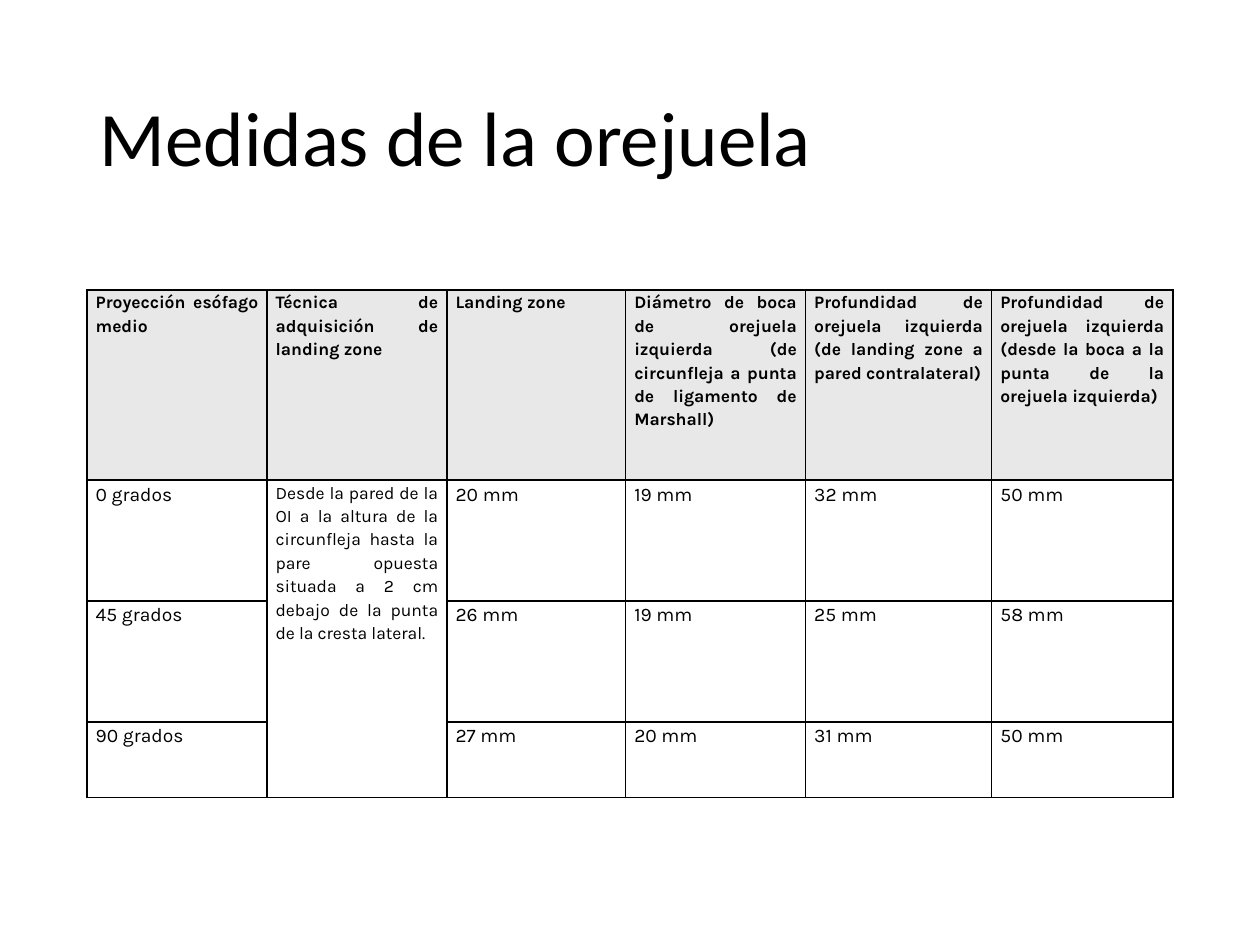
import pptx
import pptx.dml.color
import pptx.enum.text
import pptx.oxml
import pptx.oxml.ns
import pptx.util

PP_ALIGN = pptx.enum.text.PP_ALIGN
Pt = pptx.util.Pt
Inches = pptx.util.Inches

HEADERS = [
    "Proyección esófago medio",
    "Técnica de adquisición de landing zone",
    "Landing zone",
    "Diámetro de boca de orejuela izquierda (de circunfleja a punta de ligamento de Marshall)",
    "Profundidad de orejuela izquierda (de landing zone a pared contralateral)",
    "Profundidad de orejuela izquierda (desde la boca a la punta de la orejuela izquierda)",
]
TECHNIQUE = (
    "Desde la pared de la OI a la altura de la circunfleja hasta la pare opuesta "
    "situada a 2 cm debajo de la punta de la cresta lateral."
)
MEASURES = [
    ["0 grados", TECHNIQUE, "20 mm", "19 mm", "32 mm", "50 mm"],
    ["45 grados", "", "26 mm", "19 mm", "25 mm", "58 mm"],
    ["90 grados", "", "27 mm", "20 mm", "31 mm", "50 mm"],
]
COL_WIDTHS = [1.43, 1.43, 1.42, 1.43, 1.48, 1.44]
ROW_HEIGHTS = [1.51, 0.96, 0.96, 0.6]


def rgb(value):
    return pptx.dml.color.RGBColor.from_string(value)


def share_box(prs, left, top, width, height):
    w, h = prs.slide_width, prs.slide_height
    return int(left * w), int(top * h), int(width * w), int(height * h)


def style_font(p, name, size, bold=False):
    for r in p.runs:
        r.font.name = name
        r.font.size = Pt(size)
        r.font.bold = bold
        r.font.color.rgb = rgb("000000")


def add_borders(cell, color, width):
    tc_pr = cell._tc.get_or_add_tcPr()
    for i, side in enumerate(("lnL", "lnR", "lnT", "lnB")):
        line = pptx.oxml.parse_xml(
            f'<a:{side} {pptx.oxml.ns.nsdecls("a")} w="{Pt(width)}">'
            f'<a:solidFill><a:srgbClr val="{color}"/></a:solidFill></a:{side}>'
        )
        tc_pr.insert(i, line)


def fill_cell(cell, text, size, header):
    cell.margin_left = cell.margin_right = Inches(0.07)
    cell.margin_top = cell.margin_bottom = 0
    if header:
        cell.fill.solid()
        cell.fill.fore_color.rgb = rgb("E8E8E8")
    else:
        cell.fill.background()
    add_borders(cell, "000000", 1)
    if text:
        cell.text_frame.text = text
        p = cell.text_frame.paragraphs[0]
        p.alignment = PP_ALIGN.JUSTIFY
        p.line_spacing = 1.15
        p.space_after = Pt(8)
        style_font(p, "Karla", size, header)


def place_title(s, box, text):
    sp = s.shapes.title
    sp.left, sp.top, sp.width, sp.height = box
    tf = sp.text_frame
    tf.text = text
    tf.vertical_anchor = pptx.enum.text.MSO_ANCHOR.MIDDLE
    p = tf.paragraphs[0]
    p.alignment = PP_ALIGN.LEFT
    p.line_spacing = 0.9
    style_font(p, "Calibri", 44)


def place_table(s, box):
    rows = [HEADERS] + MEASURES
    left, top, width, height = box
    table = s.shapes.add_table(len(rows), len(HEADERS), left, top, width, height).table
    table.first_row = False
    table.horz_banding = False
    for col, share in zip(table.columns, COL_WIDTHS):
        col.width = int(width * share / sum(COL_WIDTHS))
    for row, share in zip(table.rows, ROW_HEIGHTS):
        row.height = int(height * share / sum(ROW_HEIGHTS))
    for i, texts in enumerate(rows):
        for j, text in enumerate(texts):
            size = 10 if i == 0 or j == 1 else 11
            fill_cell(table.cell(i, j), text, size, i == 0)
    table.cell(1, 1).merge(table.cell(3, 1))


def main():
    prs = pptx.Presentation()
    prs.slide_width = Inches(10)
    prs.slide_height = Inches(7.5)
    s = prs.slides.add_slide(prs.slide_layouts[5])
    place_title(s, share_box(prs, 0.069, 0.4 / 7.5, 0.862, 1.45 / 7.5), "Medidas de la orejuela")
    place_table(s, share_box(prs, 0.069, 2.3 / 7.5, 0.862, 4.03 / 7.5))
    prs.save("out.pptx")


if __name__ == "__main__":
    main()
